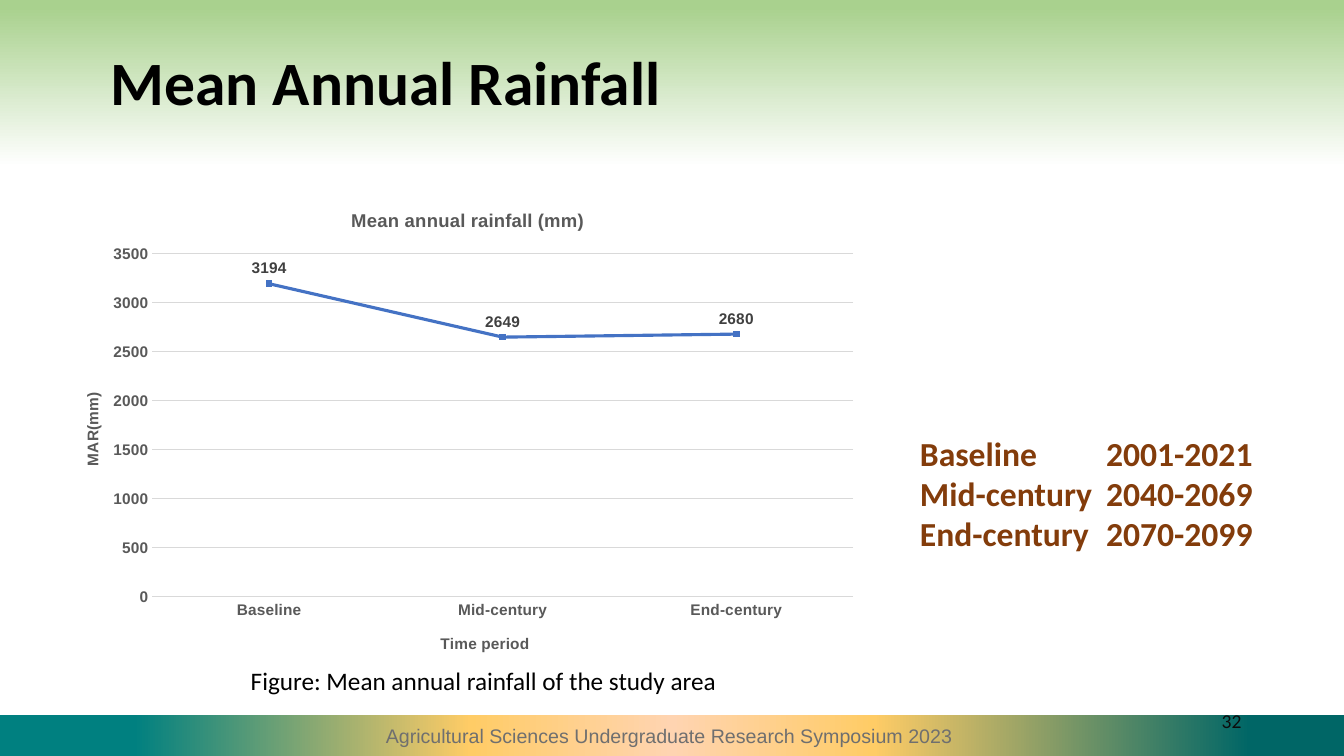
from lxml import etree
from pptx import Presentation
from pptx.chart import data
from pptx.dml.color import RGBColor
from pptx.enum import chart as kinds, shapes, text
from pptx.oxml import ns, parse_xml
from pptx.util import Pt

COLORS = {
    "leaf": "A9D18E", "white": "FFFFFF", "black": "000000", "brown": "833C0B",
    "footer": "6F6F6F", "number": "0C0C0C", "axis": "595959", "label": "404040",
    "grid": "D9D9D9", "line": "4472C4", "teal": "008080", "dark teal": "006666",
    "yellow": "FFCC66", "peach": "FFD4B1",
}
RGB = {name: RGBColor.from_string(value) for name, value in COLORS.items()}
ALIGN, ANCHOR = text.PP_ALIGN, text.MSO_ANCHOR


def add_text(place, lines, size, color, font="Calibri", bold=False,
             align=ALIGN.LEFT, anchor=ANCHOR.TOP):
    """Add a text box with one paragraph per line; place is in points."""
    frame = page.shapes.add_textbox(*map(Pt, place)).text_frame
    frame.word_wrap = True
    frame.vertical_anchor = anchor
    for number, line in enumerate(lines):
        para = frame.add_paragraph() if number else frame.paragraphs[0]
        para.alignment = align
        span = para.add_run()
        span.text = line
        span.font.name, span.font.size, span.font.bold = font, Pt(size), bold
        span.font.color.rgb = RGB[color]
    return frame


def set_layout(parent, index, **fractions):
    """Fix a chart part at fractions of the chart's width and height."""
    for old in parent.findall(ns.qn("c:layout")):
        parent.remove(old)
    layout = etree.Element(ns.qn("c:layout"))
    manual = etree.SubElement(layout, ns.qn("c:manualLayout"))
    if "w" in fractions:
        etree.SubElement(manual, ns.qn("c:layoutTarget"), val="inner")
    for key in "xy":
        etree.SubElement(manual, ns.qn(f"c:{key}Mode"), val="edge")
    for key, value in fractions.items():
        etree.SubElement(manual, ns.qn(f"c:{key}"), val=str(value))
    parent.insert(index, layout)


deck = Presentation()
deck.slide_width, deck.slide_height = Pt(960), Pt(540)
page = deck.slides.add_slide(deck.slide_layouts[6])

# Background
sky = page.background.fill
sky.gradient()
sky.gradient_angle = 270
for stop, position, color in zip(sky.gradient_stops, (0.01, 0.22), ("leaf", "white")):
    stop.position = position
    stop.color.rgb = RGB[color]

# Footer band
band = page.shapes.add_shape(shapes.MSO_SHAPE.RECTANGLE, 0, Pt(510.5), Pt(960), Pt(29.5))
band.shadow.inherit = False
band.line.fill.background()
band_stops = [(0, "teal"), (10, "teal"), (35, "yellow"), (50, "peach"),
              (65, "yellow"), (93, "dark teal"), (100, "dark teal")]
stops_xml = "".join(
    f'<a:gs pos="{percent * 1000}"><a:srgbClr val="{COLORS[color]}"/></a:gs>'
    for percent, color in band_stops)
band.fill.gradient()
gradient = band._element.spPr.find(ns.qn("a:gradFill"))
gradient.getparent().replace(gradient, parse_xml(
    f'<a:gradFill {ns.nsdecls("a")} rotWithShape="1"><a:gsLst>{stops_xml}</a:gsLst>'
    '<a:lin ang="0" scaled="0"/></a:gradFill>'))

add_text((82, 511, 796, 29), ["Agricultural Sciences Undergraduate Research Symposium 2023 "],
         14, "footer", font="Arial", align=ALIGN.CENTER, anchor=ANCHOR.MIDDLE)
add_text((678, 500.5, 216, 29), ["32"], 14, "number",
         align=ALIGN.RIGHT, anchor=ANCHOR.MIDDLE)

# Rainfall chart
rainfall = data.CategoryChartData()
rainfall.categories = ["Baseline", "Mid-century", "End-century"]
rainfall.add_series("Mean annual rainfall (mm)", (3194, 2649, 2680))
chart = page.shapes.add_chart(kinds.XL_CHART_TYPE.LINE_MARKERS_STACKED, Pt(39), Pt(133),
                              Pt(582), Pt(345), rainfall).chart
chart.has_legend = False
chart.font.name, chart.font.size, chart.font.bold = "Arial", Pt(11), True
chart.has_title = True

value_axis, category_axis = chart.value_axis, chart.category_axis
value_axis.minimum_scale, value_axis.maximum_scale, value_axis.major_unit = 0, 3500, 500
value_axis.format.line.fill.background()
for line in (value_axis.major_gridlines.format.line, category_axis.format.line):
    line.color.rgb, line.width = RGB["grid"], Pt(0.75)
for axis in (value_axis, category_axis):
    axis.major_tick_mark = axis.minor_tick_mark = kinds.XL_TICK_MARK.NONE
    axis.tick_labels.font.size = Pt(11)
    axis.tick_labels.font.bold = True
    axis.tick_labels.font.color.rgb = RGB["axis"]

titles = [
    (chart.chart_title, "Mean annual rainfall (mm)", 13.2, 0.36, 0.04),
    (category_axis.axis_title, "Time period", 11, 0.47, 0.92),
    (value_axis.axis_title, "MAR(mm)", 11, 0.03, 0.42),
]
for title, words, size, x, y in titles:
    span = title.text_frame.paragraphs[0].add_run()
    span.text = words
    span.font.name, span.font.size, span.font.bold = "Arial", Pt(size), True
    span.font.color.rgb = RGB["axis"]
    set_layout(title._element, 1, x=x, y=y)
set_layout(chart._chartSpace.chart.plotArea, 0, x=0.12, y=0.14, w=0.86, h=0.71)

series = chart.plots[0].series[0]
chart.plots[0].vary_by_categories = False
series.smooth = False
series.format.line.color.rgb, series.format.line.width = RGB["line"], Pt(2.25)
marker = series.marker
marker.style, marker.size = kinds.XL_MARKER_STYLE.SQUARE, 4
marker.format.fill.solid()
marker.format.fill.fore_color.rgb = marker.format.line.color.rgb = RGB["line"]
labels = series.data_labels
labels.show_value = True
labels.position = kinds.XL_LABEL_POSITION.ABOVE
labels.font.name, labels.font.size, labels.font.bold = "Arial", Pt(11), True
labels.font.color.rgb = RGB["label"]

# Periods, with the years lined up on a tab stop
periods = add_text((650, 305.5, 300, 94),
                   ["Baseline\t2001-2021", "Mid-century\t2040-2069", "End-century\t2070-2099"],
                   24, "brown", bold=True)
for para in periods.paragraphs:
    tabs = etree.SubElement(para._p.get_or_add_pPr(), ns.qn("a:tabLst"))
    etree.SubElement(tabs, ns.qn("a:tab"), pos=str(Pt(133)), algn="l")

heading = add_text((72, 26, 888, 70.5), ["Mean Annual Rainfall"], 44, "black",
                   bold=True, anchor=ANCHOR.MIDDLE)
heading.paragraphs[0].line_spacing = 0.9
add_text((172, 471.5, 372, 29), ["Figure: Mean annual rainfall of the study area"], 18, "black")

deck.save("out.pptx")
